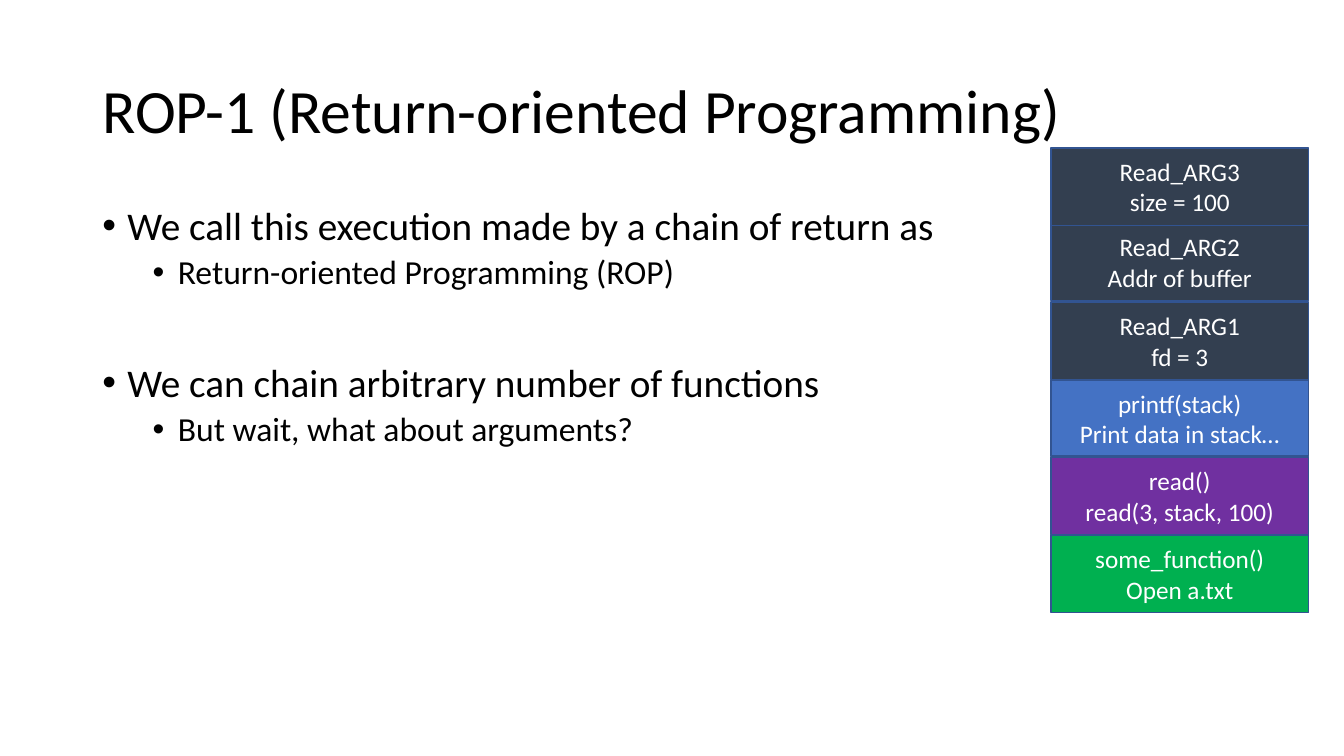
from lxml import etree
from pptx import Presentation
from pptx.dml.color import RGBColor
from pptx.enum.shapes import MSO_SHAPE
from pptx.enum.text import MSO_ANCHOR, PP_ALIGN
from pptx.oxml.ns import qn
from pptx.util import Pt

RECTANGLE = MSO_SHAPE.RECTANGLE
TOP, MIDDLE = MSO_ANCHOR.TOP, MSO_ANCHOR.MIDDLE
LEFT, CENTER = PP_ALIGN.LEFT, PP_ALIGN.CENTER

FONT = "Calibri"
BLACK, WHITE, BORDER = "000000", "FFFFFF", "325491"
SLATE, BLUE, PURPLE, GREEN = "333F50", "4472C4", "7030A0", "00B050"

TITLE = "ROP-1 (Return-oriented Programming)"
# level, space before, text
BULLETS = [
    (0, 0, "We call this execution made by a chain of return as"),
    (1, 5, "Return-oriented Programming (ROP)"),
    (0, 51, "We can chain arbitrary number of functions"),
    (1, 5, "But wait, what about arguments?"),
]
BULLET_SIZES = (28, 24)
# top, height, fill, lines; from the bottom of the stack upwards
STACK = [
    (382.3, 55.4, GREEN, ("some_function()", "Open a.txt")),
    (326.5, 55.4, PURPLE, ("read()", "read(3, stack, 100)")),
    (271.4, 54.4, BLUE, ("printf(stack)", "Print data in stack…")),
    (215.8, 55.4, SLATE, ("Read_ARG1", "fd = 3")),
    (159.4, 55.4, SLATE, ("Read_ARG2", "Addr of buffer")),
    (105.7, 55.4, SLATE, ("Read_ARG3", "size = 100")),
]
STACK_LEFT, STACK_WIDTH = 750.8, 183.8
TEXT_LEFT, TEXT_WIDTH = 66, 828


def color(hex_value):
    return RGBColor.from_string(hex_value)


def set_frame(frame, anchor):
    frame.word_wrap = True
    frame.vertical_anchor = anchor


def write_line(frame, index, text, size, hex_color, **paragraph_format):
    """Fill the first paragraph, or append one, and return it."""
    line = frame.add_paragraph() if index else frame.paragraphs[0]
    for name, value in paragraph_format.items():
        setattr(line, name, value)
    run = line.add_run()
    run.text = text
    run.font.name, run.font.size = FONT, Pt(size)
    run.font.color.rgb = color(hex_color)
    return line


def add_bullet(line, level):
    properties = line._p.get_or_add_pPr()
    properties.set("marL", str(Pt(18 + 36 * level)))
    properties.set("indent", str(Pt(-18)))
    etree.SubElement(properties, qn("a:buFont"), typeface="Arial")
    etree.SubElement(properties, qn("a:buChar"), char="•")


def add_text_frame(slide, top, height, anchor):
    box = slide.shapes.add_textbox(Pt(TEXT_LEFT), Pt(top), Pt(TEXT_WIDTH), Pt(height))
    set_frame(box.text_frame, anchor)
    return box.text_frame


def add_stack_cell(slide, top, height, fill, lines):
    cell = slide.shapes.add_shape(
        RECTANGLE, Pt(STACK_LEFT), Pt(top), Pt(STACK_WIDTH), Pt(height))
    cell.shadow.inherit = False
    cell.fill.solid()
    cell.fill.fore_color.rgb = color(fill)
    cell.line.color.rgb = color(BORDER)
    cell.line.width = Pt(1)
    set_frame(cell.text_frame, MIDDLE)
    for index, text in enumerate(lines):
        write_line(cell.text_frame, index, text, 18, WHITE, alignment=CENTER)


def main():
    deck = Presentation()
    deck.slide_width, deck.slide_height = Pt(960), Pt(540)
    slide = deck.slides.add_slide(deck.slide_layouts[6])

    title = add_text_frame(slide, 28.75, 104.4, MIDDLE)
    write_line(title, 0, TITLE, 44, BLACK, alignment=LEFT, line_spacing=0.9)

    body = add_text_frame(slide, 143.75, 342.6, TOP)
    for index, (level, space, text) in enumerate(BULLETS):
        line = write_line(body, index, text, BULLET_SIZES[level], BLACK, level=level,
                          alignment=LEFT, line_spacing=0.9, space_before=Pt(space))
        add_bullet(line, level)

    for cell in STACK:
        add_stack_cell(slide, *cell)

    deck.save("out.pptx")


if __name__ == "__main__":
    main()
